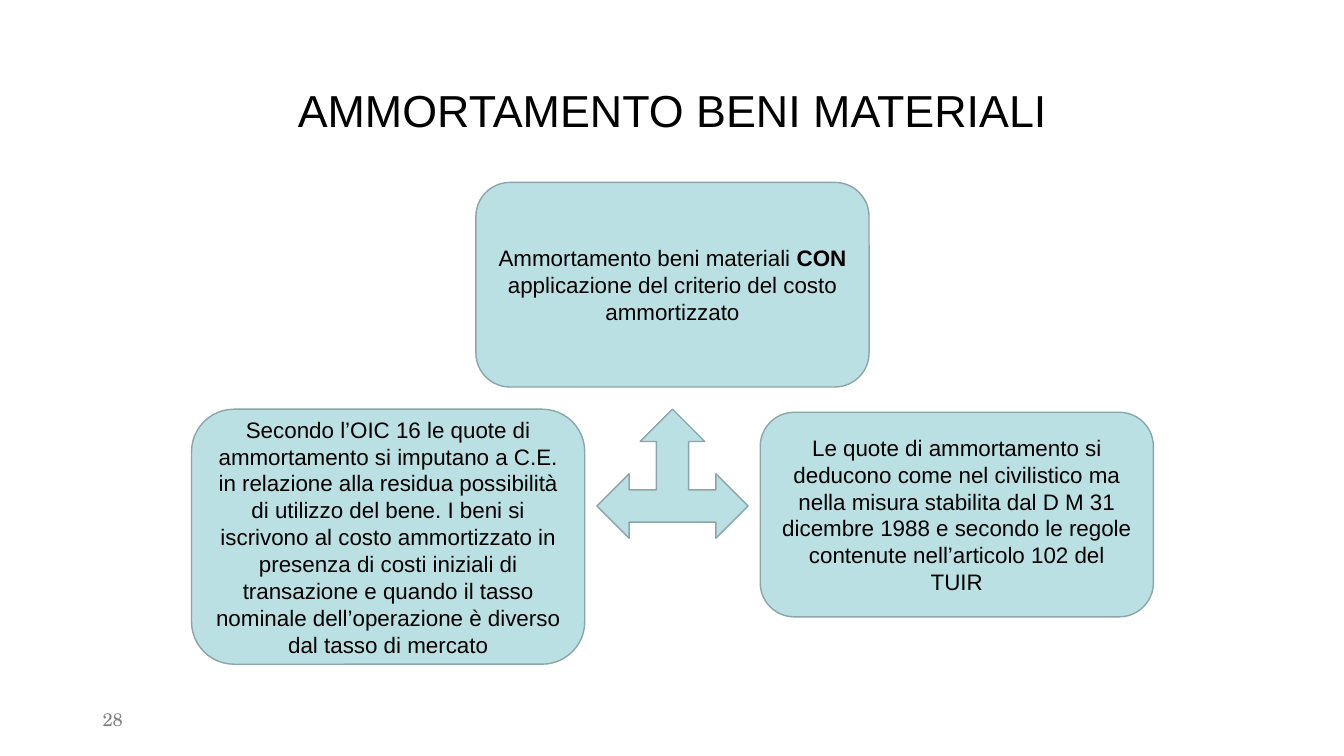
"""Builds the slide on depreciation of tangible assets."""
from pptx import Presentation
from pptx.dml.color import RGBColor
from pptx.enum.shapes import MSO_SHAPE
from pptx.enum.text import MSO_ANCHOR, PP_ALIGN
from pptx.util import Inches, Pt

COLOURS = {"text": "000000", "fill": "BBE0E3", "line": "8AA6A8", "number": "808080"}
BOX_WIDTH = 3.9
CENTRE = 6.67
SIDE_OFFSET = 2.82


def colour(name):
    return RGBColor.from_string(COLOURS[name])


def place(shape, left, top, width, height):
    shape.left, shape.top = Inches(left), Inches(top)
    shape.width, shape.height = Inches(width), Inches(height)


def write(frame, paragraphs, size=16, font="Arial", ink="text",
          align=PP_ALIGN.CENTER, spacing=None):
    """Fill a frame with paragraphs, each a list of (text, bold) spans."""
    frame.word_wrap = True
    frame.vertical_anchor = MSO_ANCHOR.MIDDLE
    for index, spans in enumerate(paragraphs):
        para = frame.add_paragraph() if index else frame.paragraphs[0]
        para.alignment = align
        para.line_spacing = spacing
        for text, bold in spans:
            span = para.add_run()
            span.text = text
            span.font.name = font
            span.font.size = Pt(size)
            span.font.bold = bold
            span.font.color.rgb = colour(ink)


def add_figure(page, kind, left, top, width, height):
    figure = page.shapes.add_shape(
        kind, Inches(left), Inches(top), Inches(width), Inches(height))
    figure.shadow.inherit = False
    figure.fill.solid()
    figure.fill.fore_color.rgb = colour("fill")
    figure.line.color.rgb = colour("line")
    figure.line.width = Pt(1)
    return figure


def add_box(page, centre, top, paragraphs, height=2.03):
    box = add_figure(page, MSO_SHAPE.ROUNDED_RECTANGLE,
                     centre - BOX_WIDTH / 2, top, BOX_WIDTH, height)
    write(box.text_frame, paragraphs)


def add_title(page, text):
    title = page.shapes.title
    place(title, 0.92, 0.4, 11.5, 1.45)
    write(title.text_frame, [[(text, False)]], size=32, spacing=0.9)


def add_page_number(page, number):
    box = page.shapes.add_textbox(Inches(0.92), Inches(6.95), Inches(3), Inches(0.4))
    write(box.text_frame, [[(number, False)]], size=13, font="TeX Gyre Schola",
          ink="number", align=PP_ALIGN.LEFT, spacing=0.93)


def main():
    deck = Presentation()
    deck.slide_width, deck.slide_height = Inches(13.33), Inches(7.5)
    page = deck.slides.add_slide(deck.slide_layouts[5])
    add_title(page, "AMMORTAMENTO BENI MATERIALI")
    add_page_number(page, "28")
    add_box(page, CENTRE, 1.81, [[
        ("Ammortamento beni materiali ", False),
        ("CON", True),
        (" applicazione del criterio del costo ammortizzato", False)]])
    add_figure(page, MSO_SHAPE.LEFT_RIGHT_UP_ARROW, CENTRE - 0.75, 4.06, 1.5, 1.28)
    add_box(page, CENTRE - SIDE_OFFSET, 4.06, [[(
        "Secondo l’OIC 16 le quote di ammortamento si imputano a C.E. in relazione "
        "alla residua possibilità di utilizzo del bene. I beni si iscrivono al costo "
        "ammortizzato in presenza di costi iniziali di transazione e quando il tasso "
        "nominale dell’operazione è diverso dal tasso di mercato", False)]], height=2.53)
    add_box(page, CENTRE + SIDE_OFFSET, 4.09, [
        [("Le quote di ammortamento si deducono come nel civilistico ma", False)],
        [("nella misura stabilita dal D M 31 dicembre 1988 e secondo le regole "
          "contenute nell’articolo 102 del TUIR", False)]])
    deck.save("out.pptx")


if __name__ == "__main__":
    main()
